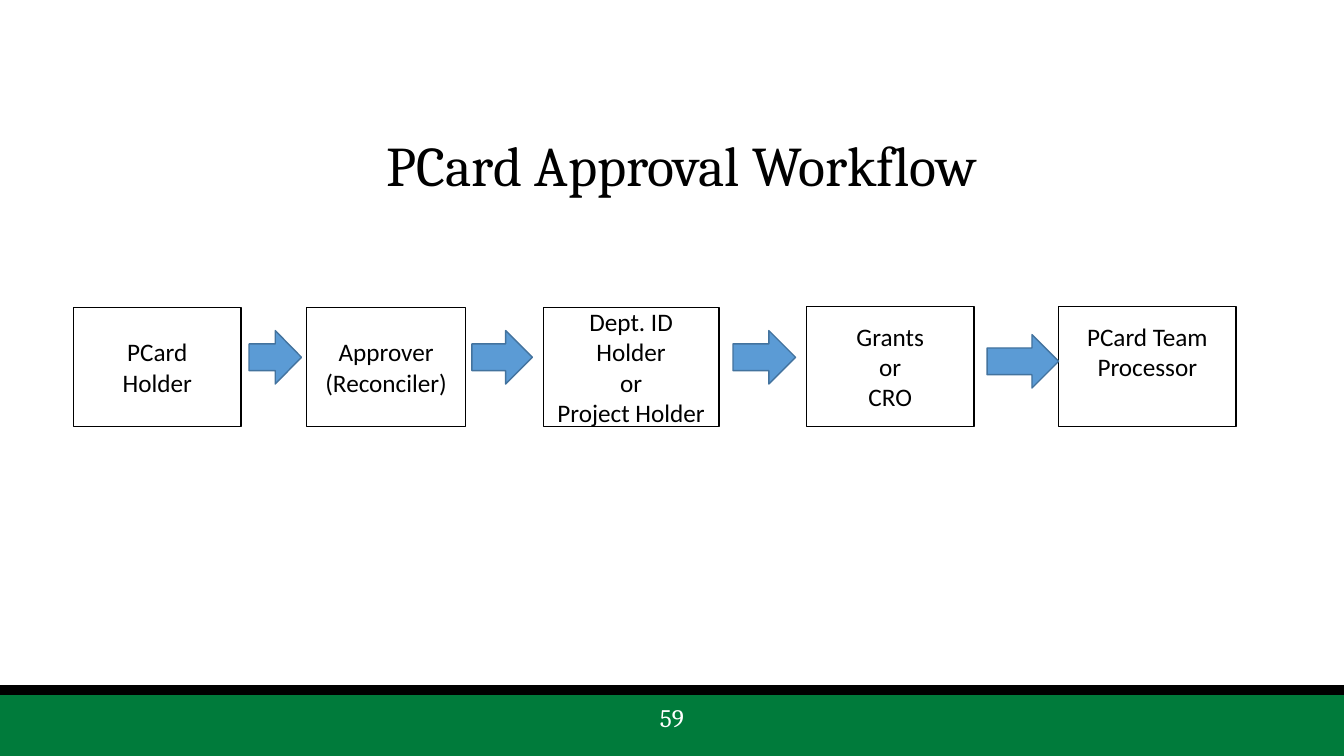
from pptx import Presentation
from pptx.dml.color import RGBColor
from pptx.enum.shapes import MSO_SHAPE as Preset
from pptx.enum.text import MSO_ANCHOR as Anchor, PP_ALIGN as Align
from pptx.util import Inches, Pt

BLACK = RGBColor(0x00, 0x00, 0x00)
WHITE = RGBColor(0xFF, 0xFF, 0xFF)
GREEN = RGBColor(0x00, 0x7B, 0x3B)
BLUE = RGBColor(0x5B, 0x9B, 0xD5)
DARK_BLUE = RGBColor(0x43, 0x73, 0x9E)

STEPS = [
    (0.73, 3.05, 1.66, ["PCard", "Holder"]),
    (3.04, 3.05, 1.58, ["Approver", "(Reconciler)"]),
    (5.39, 3.05, 1.74, ["Dept. ID Holder", "or", "Project Holder"]),
    (8.0, 3.04, 1.66, ["Grants", "or", "CRO"]),
    (10.5, 3.04, 1.76, ["PCard Team", "Processor"]),
]
STEP_BOTTOM = 4.23
ARROWS = [(2.47, 3.28, 0.52), (4.68, 3.28, 0.6), (7.27, 3.28, 0.62), (9.79, 3.32, 0.71)]
ARROW_HEIGHT = 0.53


def add_preset(slide, preset, left, top, width, height, fill, line):
    shape = slide.shapes.add_shape(
        preset, Inches(left), Inches(top), Inches(width), Inches(height))
    shape.shadow.inherit = False
    shape.fill.solid()
    shape.fill.fore_color.rgb = fill
    shape.line.color.rgb = line
    shape.line.width = Pt(1)
    return shape


def write_lines(frame, lines, font_name, size, color, spacing=1.0):
    frame.word_wrap = True
    for index, text in enumerate(lines):
        paragraph = frame.add_paragraph() if index else frame.paragraphs[0]
        paragraph.alignment = Align.CENTER
        paragraph.line_spacing = spacing
        run = paragraph.add_run()
        run.text = text
        run.font.name = font_name
        run.font.size = Pt(size)
        run.font.color.rgb = color


def add_title(slide, text):
    title = slide.shapes.title
    title.left, title.top = Inches(0.92), Inches(1.1)
    title.width, title.height = Inches(11.5), Inches(1.08)
    frame = title.text_frame
    frame.vertical_anchor = Anchor.MIDDLE
    frame.margin_left = Inches(0.28)
    frame.margin_top = Inches(0.12)
    write_lines(frame, [text], "Cambria", 40, BLACK, 0.9)


def add_footer(slide, number):
    add_preset(slide, Preset.RECTANGLE, 0, 6.89, 13.33, 0.61, GREEN, GREEN)
    add_preset(slide, Preset.RECTANGLE, 0, 6.8, 13.33, 0.09, BLACK, BLACK)
    box = slide.shapes.add_textbox(0, Inches(6.95), Inches(13.33), Inches(0.5))
    write_lines(box.text_frame, [number], "Cambria", 18, WHITE, 0.9)


def add_step(slide, left, top, width, lines):
    box = add_preset(slide, Preset.RECTANGLE, left, top, width, STEP_BOTTOM - top, WHITE, BLACK)
    box.text_frame.vertical_anchor = Anchor.MIDDLE
    write_lines(box.text_frame, lines, "Calibri", 18, BLACK)
    return box


def main():
    presentation = Presentation()
    presentation.slide_width = Inches(13.33)
    presentation.slide_height = Inches(7.5)
    slide = presentation.slides.add_slide(presentation.slide_layouts[5])

    add_footer(slide, "59")
    add_title(slide, "PCard Approval Workflow")
    boxes = [add_step(slide, *step) for step in STEPS]
    boxes[-1].text_frame.margin_bottom = Inches(0.35)
    for left, top, width in ARROWS:
        add_preset(slide, Preset.RIGHT_ARROW, left, top, width, ARROW_HEIGHT, BLUE, DARK_BLUE)

    presentation.save("out.pptx")


if __name__ == "__main__":
    main()
